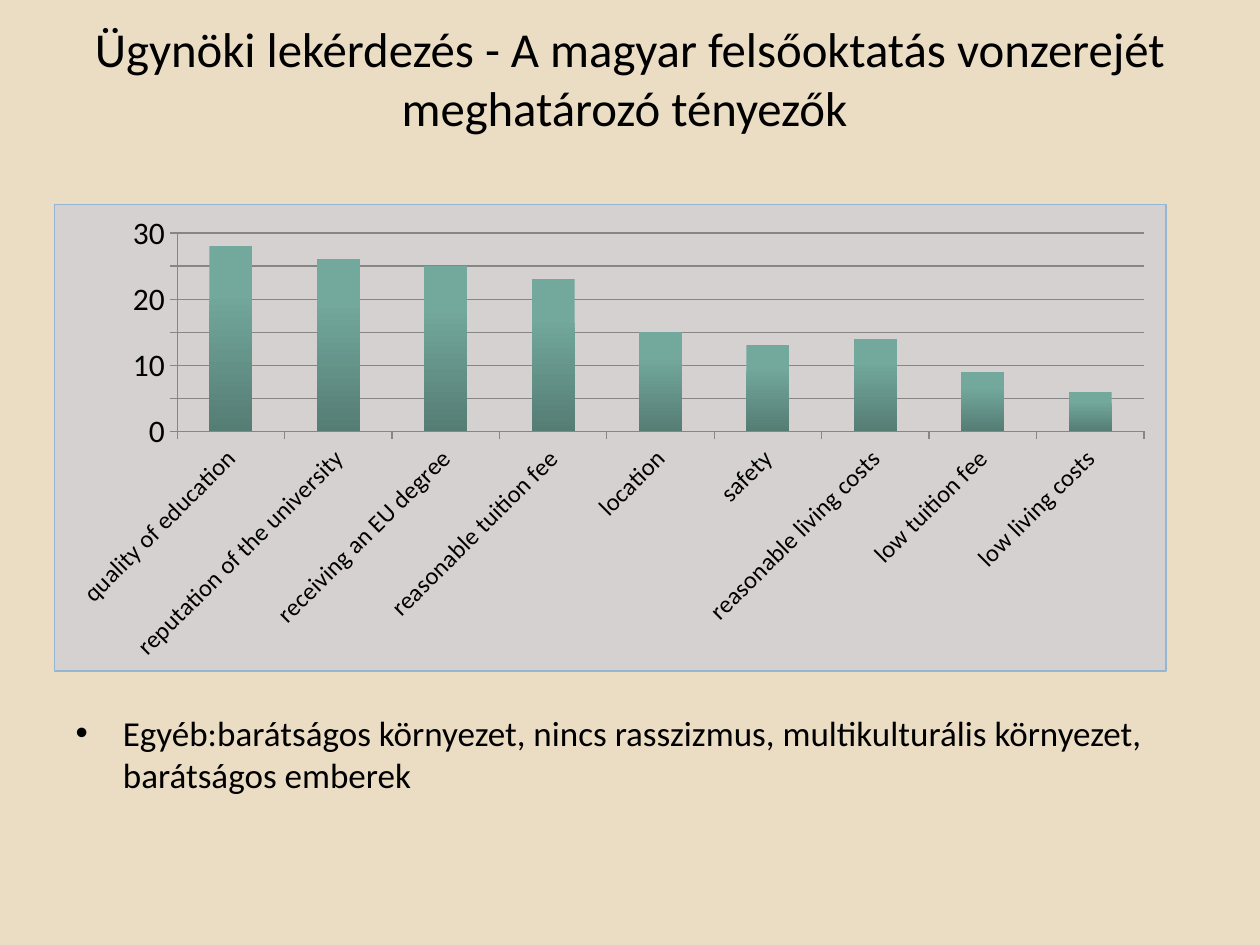
import pptx
import pptx.chart.data
import pptx.dml.color
import pptx.enum.chart
import pptx.enum.text
import pptx.oxml
import pptx.util
from lxml import etree

Inches = pptx.util.Inches
Pt = pptx.util.Pt
rgb = pptx.dml.color.RGBColor.from_string
Align = pptx.enum.text.PP_ALIGN

THEME = {
    "font": "Calibri",
    "background": "EBDDC3",
    "text": "000000",
    "panel": "D5D1D1",
    "panel_border": "94B6D2",
    "bar_top": "73A89D",
    "bar_bottom": "557D74",
    "axis": "868686",
    "title_size": 27.9,
    "body_size": 20,
    "value_size": 18,
    "category_size": 14,
}

FACTORS = {
    "quality of education": 28,
    "reputation of the university": 26,
    "receiving an EU degree": 25,
    "reasonable tuition fee": 23,
    "location": 15,
    "safety": 13,
    "reasonable living costs": 14,
    "low tuition fee": 9,
    "low living costs": 6,
}

deck = pptx.Presentation()
deck.slide_width, deck.slide_height = Inches(10), Inches(7.5)
width, height = deck.slide_width, deck.slide_height
margin = int(width * 0.05)
column = width - 2 * margin

slide = deck.slides.add_slide(deck.slide_layouts[1])
slide.background.fill.solid()
slide.background.fill.fore_color.rgb = rgb(THEME["background"])


def write(holder, text, *, box, size, align, bottom_inset):
    """Move a placeholder to box and set one paragraph that rests on its bottom inset."""
    holder.left, holder.top, holder.width, holder.height = (int(v) for v in box)
    frame = holder.text_frame
    frame.word_wrap = True
    frame.auto_size = pptx.enum.text.MSO_AUTO_SIZE.NONE
    frame.vertical_anchor = pptx.enum.text.MSO_ANCHOR.BOTTOM
    frame.margin_bottom = Inches(bottom_inset)
    paragraph = frame.paragraphs[0]
    paragraph.alignment = align
    run = paragraph.add_run()
    run.text = text
    run.font.name = THEME["font"]
    run.font.size = Pt(size)
    run.font.color.rgb = rgb(THEME["text"])


write(
    slide.shapes.title,
    "Ügynöki lekérdezés - A magyar felsőoktatás vonzerejét meghatározó tényezők ",
    box=(margin, height * 0.04, column, height / 6),
    size=THEME["title_size"], align=Align.CENTER, bottom_inset=0.47,
)
write(
    slide.placeholders[1],
    "Egyéb:barátságos környezet, nincs rasszizmus, multikulturális környezet, "
    "barátságos emberek",
    box=(margin, height * 0.23, column, height * 0.66),
    size=THEME["body_size"], align=Align.LEFT, bottom_inset=0.36,
)

# Chart of the factors
factor_data = pptx.chart.data.CategoryChartData()
factor_data.categories = list(FACTORS)
factor_data.add_series("Series 1", list(FACTORS.values()))
chart = slide.shapes.add_chart(
    pptx.enum.chart.XL_CHART_TYPE.COLUMN_CLUSTERED,
    Inches(0.43), Inches(1.62), Inches(8.83), Inches(3.71), factor_data,
).chart
chart.has_legend = False
chart.has_title = False
chart.font.name = THEME["font"]
chart.font.size = Pt(THEME["value_size"])
chart.font.color.rgb = rgb(THEME["text"])

bars = chart.plots[0]
bars.gap_width = 150
bars.vary_by_categories = False
bar_fill = bars.series[0].format.fill
bar_fill.gradient()
bar_fill.gradient_angle = 270
stops = zip(bar_fill.gradient_stops, ("bar_top", "bar_bottom"), (0.25, 1))
for stop, shade, position in stops:
    stop.color.rgb = rgb(THEME[shade])
    stop.position = position

values, factors = chart.value_axis, chart.category_axis
values.minimum_scale, values.maximum_scale, values.major_unit = 0, 30, 5
values.has_major_gridlines = True
for line in (values.format.line, factors.format.line, values.major_gridlines.format.line):
    line.color.rgb = rgb(THEME["axis"])
    line.width = Pt(0.75)
for axis in (values, factors):
    axis.major_tick_mark = pptx.enum.chart.XL_TICK_MARK.OUTSIDE
    axis.minor_tick_mark = pptx.enum.chart.XL_TICK_MARK.NONE
factors.tick_labels.font.size = Pt(THEME["category_size"])

# Slanted category labels and the panel behind the chart need XML
qn = pptx.oxml.ns.qn
label_body = factors._element.find(qn("c:txPr")).find(qn("a:bodyPr"))
label_body.set("rot", str(-45 * 60000))
label_body.set("vert", "horz")

chart_space = chart._chartSpace
panel = etree.Element(qn("c:spPr"))
border = etree.Element(qn("a:ln"), w=str(Pt(0.75)))
for parent, shade in ((panel, "panel"), (border, "panel_border")):
    fill = etree.SubElement(parent, qn("a:solidFill"))
    etree.SubElement(fill, qn("a:srgbClr"), val=THEME[shade])
panel.append(border)
chart_space.find(qn("c:chart")).addnext(panel)

deck.save("out.pptx")
